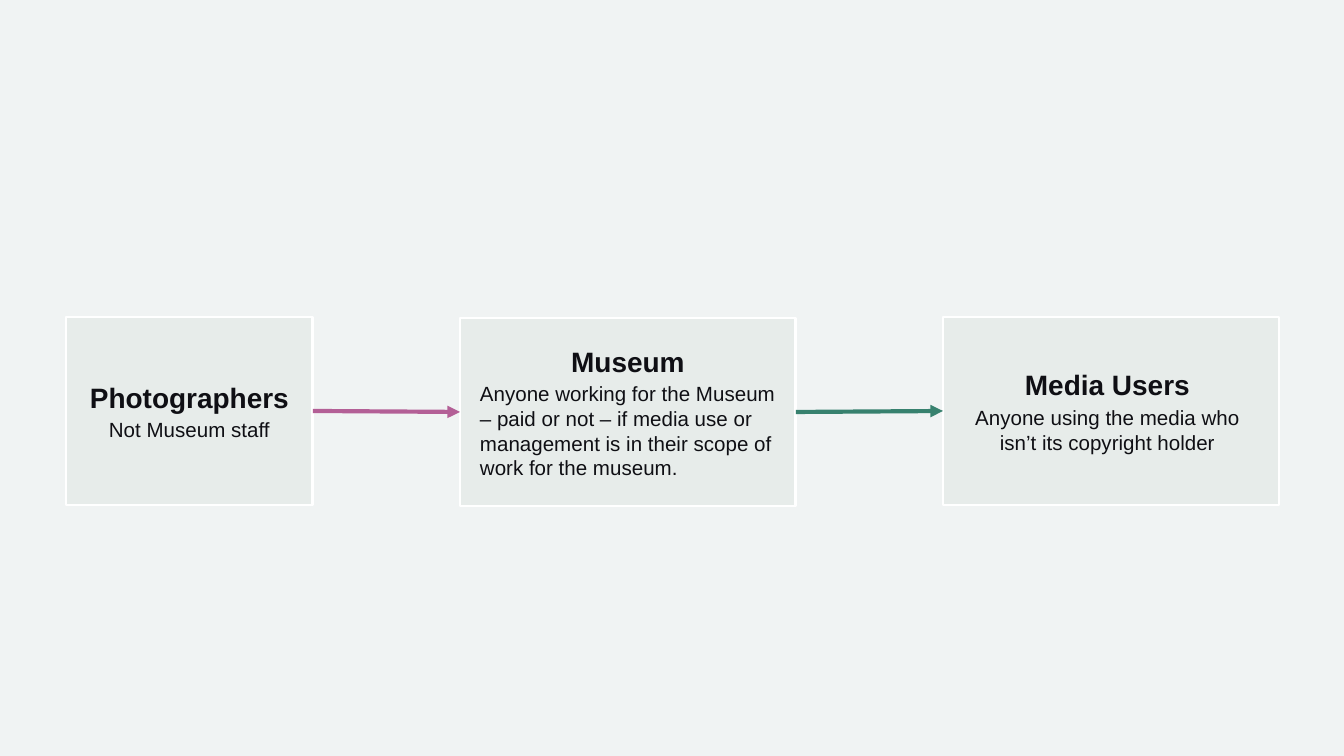
from dataclasses import dataclass

from lxml.etree import SubElement
from pptx import Presentation
from pptx.dml.color import RGBColor
from pptx.enum.shapes import MSO_CONNECTOR, MSO_SHAPE
from pptx.enum.text import MSO_ANCHOR, PP_ALIGN
from pptx.oxml.ns import qn
from pptx.util import Pt

EMU_PER_PX = 914400 / 134.4


def px(length):
    return round(length * EMU_PER_PX)


@dataclass(frozen=True)
class Theme:
    font: str = "Arial"
    background: str = "F0F3F3"
    box: str = "E7ECEA"
    border: str = "FFFFFF"
    ink: str = "0F0F14"
    deposit: str = "B35F96"
    release: str = "37816E"
    heading_size: int = 15
    detail_size: int = 11
    border_width: float = 1.5
    arrow_width: float = 2.25


class FlowSlide:
    def __init__(self, slide, theme):
        self.slide = slide
        self.theme = theme

    def background(self):
        fill = self.slide.background.fill
        fill.solid()
        fill.fore_color.rgb = RGBColor.from_string(self.theme.background)

    def format_paragraph(self, paragraph, size, bold, align):
        paragraph.alignment = align
        for run in paragraph.runs:
            run.font.name = self.theme.font
            run.font.size = Pt(size)
            run.font.bold = bold
            run.font.color.rgb = RGBColor.from_string(self.theme.ink)

    def role_box(self, left, top, width, height, role, detail, align, right_inset):
        theme = self.theme
        box = self.slide.shapes.add_shape(
            MSO_SHAPE.RECTANGLE, px(left), px(top), px(width), px(height))
        box.shadow.inherit = False
        box.fill.solid()
        box.fill.fore_color.rgb = RGBColor.from_string(theme.box)
        box.line.color.rgb = RGBColor.from_string(theme.border)
        box.line.width = Pt(theme.border_width)

        frame = box.text_frame
        frame.word_wrap = True
        frame.vertical_anchor = MSO_ANCHOR.MIDDLE
        frame.margin_left, frame.margin_right = px(20), px(right_inset)
        frame.margin_top = frame.margin_bottom = px(7)
        frame.text = role
        self.format_paragraph(
            frame.paragraphs[0], theme.heading_size, True, PP_ALIGN.CENTER)
        description = frame.add_paragraph()
        description.text = detail
        description.space_before = Pt(2)
        self.format_paragraph(description, theme.detail_size, False, align)
        return box

    def arrow(self, source, target, color):
        link = self.slide.shapes.add_connector(MSO_CONNECTOR.STRAIGHT, 0, 0, 0, 0)
        link.begin_connect(source, 3)
        link.end_connect(target, 1)
        link.line.color.rgb = RGBColor.from_string(color)
        link.line.width = Pt(self.theme.arrow_width)
        SubElement(link.line._get_or_add_ln(), qn("a:tailEnd"), type="triangle")
        SubElement(link._element.spPr, qn("a:effectLst"))


def main():
    presentation = Presentation()
    presentation.slide_width, presentation.slide_height = px(1344), px(756)
    theme = Theme()
    flow = FlowSlide(
        presentation.slides.add_slide(presentation.slide_layouts[6]), theme)
    flow.background()

    # Roles from left to right: width, top, name, detail, alignment, right inset
    roles = [
        (247, 317, "Photographers", "Not Museum staff", PP_ALIGN.CENTER, 20),
        (336, 318, "Museum",
         "Anyone working for the Museum – paid or not – if media use or "
         "management is in their scope of work for the museum.",
         PP_ALIGN.LEFT, 20),
        (336, 317, "Media Users",
         "Anyone using the media who isn’t its copyright holder",
         PP_ALIGN.CENTER, 27),
    ]
    left, gap, height = 66, 147, 188
    boxes = []
    for width, top, role, detail, align, right_inset in roles:
        boxes.append(flow.role_box(
            left, top, width, height, role, detail, align, right_inset))
        left += width + gap

    # Media passes from each role to the next
    for source, target, color in zip(boxes, boxes[1:], (theme.deposit, theme.release)):
        flow.arrow(source, target, color)

    presentation.save("out.pptx")


if __name__ == "__main__":
    main()
